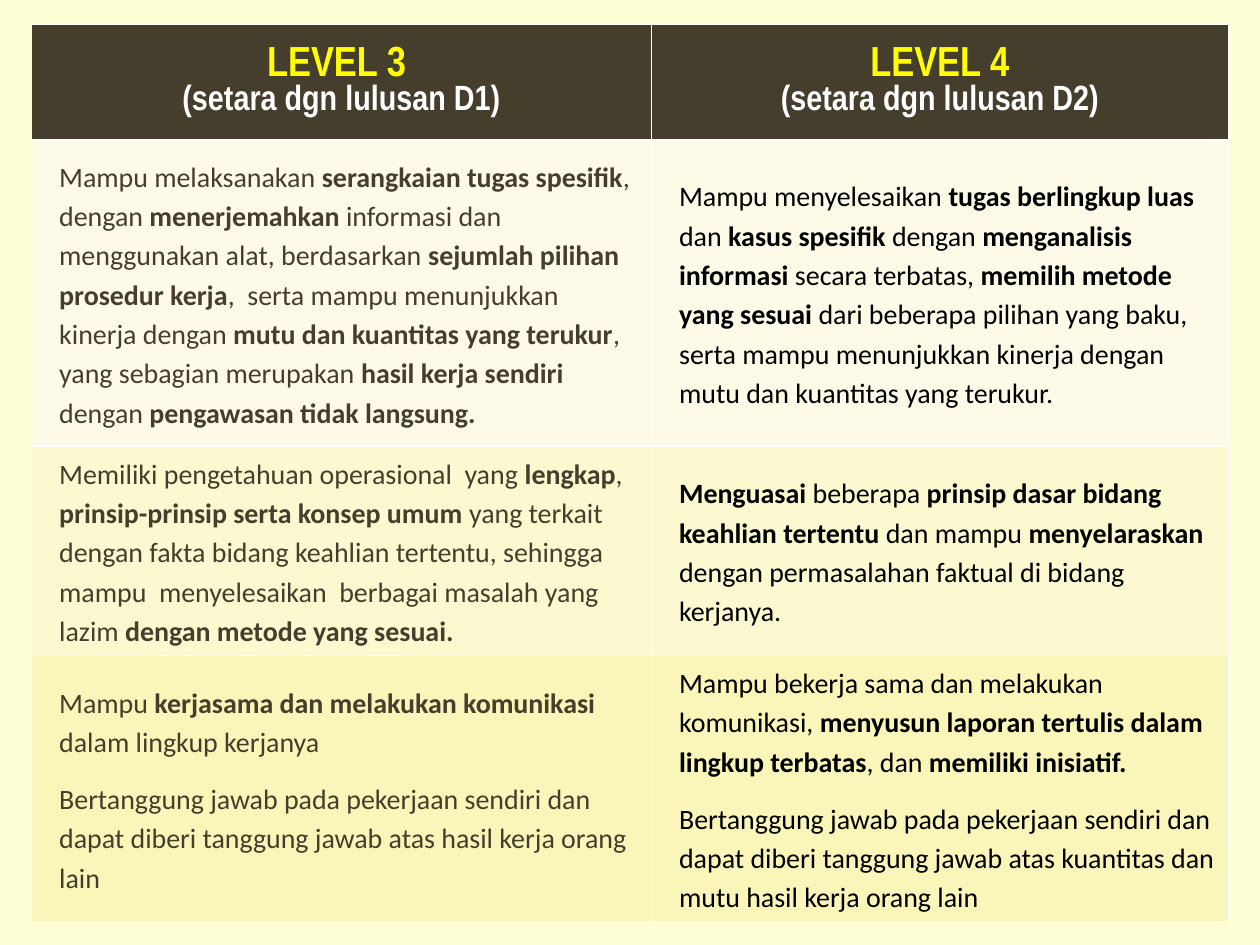
"""Build a slide comparing the Level 3 and Level 4 qualifications in a table."""
from lxml import etree
from pptx import Presentation
from pptx import util as u
from pptx.dml.color import RGBColor
from pptx.enum import text
from pptx.oxml.ns import qn

DARK = RGBColor(0x46, 0x3E, 0x2C)
BLACK = RGBColor(0, 0, 0)
WHITE = RGBColor(255, 255, 255)
YELLOW = RGBColor(255, 255, 0)
PAPER = RGBColor(0xFF, 0xFF, 0xD6)
FILLS = [DARK, RGBColor(0xFD, 0xFB, 0xE7), RGBColor(0xFC, 0xF9, 0xD0),
         RGBColor(0xFA, 0xF5, 0xB8)]
INKS = [DARK, BLACK]
COLS = [4.92, 4.58]
ROWS = [0.92, 2.43, 1.65, 2.06]
LEFT, TOP = 0.25, 0.19

HEADS = [
    ["LEVEL 3 ", "(setara dgn lulusan D1)"],
    ["LEVEL 4", "(setara dgn lulusan D2)"],
]
# Asterisks enclose the bold words.
BODY = [
    [
        ["Mampu melaksanakan *serangkaian tugas spesifik*, dengan *menerjemahkan *"
         "informasi dan menggunakan alat, berdasarkan *sejumlah pilihan prosedur kerja*"
         ",  serta mampu menunjukkan kinerja dengan *mutu dan kuantitas yang terukur*"
         ", yang sebagian merupakan *hasil kerja sendiri *dengan "
         "*pengawasan tidak langsung.*"],
        ["Mampu menyelesaikan *tugas berlingkup luas *dan *kasus spesifik *dengan "
         "*menganalisis informasi *secara terbatas, *memilih metode yang sesuai *"
         "dari beberapa pilihan yang baku, serta mampu menunjukkan kinerja dengan "
         "mutu dan kuantitas yang terukur."],
    ],
    [
        ["Memiliki pengetahuan operasional  yang *lengkap*, "
         "*prinsip-prinsip serta konsep umum* yang terkait dengan fakta bidang "
         "keahlian tertentu, sehingga  mampu  menyelesaikan  berbagai masalah yang "
         "lazim *dengan metode yang sesuai.*"],
        ["*Menguasai *beberapa *prinsip dasar bidang keahlian tertentu *dan mampu "
         "*menyelaraskan *dengan permasalahan faktual di bidang kerjanya."],
    ],
    [
        ["Mampu *kerjasama dan melakukan komunikasi *dalam lingkup kerjanya",
         "Bertanggung jawab pada pekerjaan sendiri dan dapat diberi tanggung jawab "
         "atas hasil kerja orang lain"],
        ["Mampu bekerja sama dan melakukan komunikasi, "
         "*menyusun laporan tertulis dalam lingkup terbatas*, dan "
         "*memiliki inisiatif.*",
         "Bertanggung jawab pada pekerjaan sendiri dan dapat diberi tanggung jawab "
         "atas kuantitas dan mutu hasil kerja orang lain"],
    ],
]


def add_run(para, words, face, size, ink, bold):
    run = para.add_run()
    run.text = words
    font = run.font
    font.name, font.size, font.bold = face, u.Pt(size), bold
    font.color.rgb = ink


def paras(cell, lines):
    frame = cell.text_frame
    for i, line in enumerate(lines):
        yield (frame.add_paragraph() if i else frame.paragraphs[0]), line


def fill_head(cell, lines):
    styles = [(24, YELLOW), (20, WHITE)]
    for (para, line), (size, ink) in zip(paras(cell, lines), styles):
        para.alignment = text.PP_ALIGN.CENTER
        add_run(para, line, "Arial Narrow", size, ink, True)


def fill_body(cell, lines, ink):
    for para, line in paras(cell, lines):
        para.line_spacing, para.space_after = 1.15, u.Pt(10)
        para._p.get_or_add_pPr().set("marL", str(u.Inches(0.12)))
        for i, words in enumerate(line.split("*")):
            if words:
                add_run(para, words, "Calibri", 16, ink, i % 2 == 1)


def style_cell(cell, fill):
    cell.vertical_anchor = text.MSO_ANCHOR.MIDDLE
    props = cell._tc.get_or_add_tcPr()
    for side in ("lnL", "lnR", "lnT", "lnB"):
        edge = etree.SubElement(props, qn("a:" + side), w=str(u.Pt(1)))
        solid = etree.SubElement(edge, qn("a:solidFill"))
        etree.SubElement(solid, qn("a:srgbClr"), val=str(WHITE))
    cell.fill.solid()
    cell.fill.fore_color.rgb = fill


def main():
    deck = Presentation()
    deck.slide_width, deck.slide_height = u.Inches(10), u.Inches(7.5)
    slide = deck.slides.add_slide(deck.slide_layouts[6])
    slide.background.fill.solid()
    slide.background.fill.fore_color.rgb = PAPER
    box = [u.Inches(n) for n in (LEFT, TOP, sum(COLS), sum(ROWS))]
    table = slide.shapes.add_table(len(ROWS), len(COLS), *box).table
    for col, width in zip(table.columns, COLS):
        col.width = u.Inches(width)
    for row, height in zip(table.rows, ROWS):
        row.height = u.Inches(height)
    for r, fill in enumerate(FILLS):
        for c, ink in enumerate(INKS):
            cell = table.cell(r, c)
            style_cell(cell, fill)
            if r:
                fill_body(cell, BODY[r - 1][c], ink)
            else:
                fill_head(cell, HEADS[c])
    deck.save("out.pptx")


if __name__ == "__main__":
    main()
